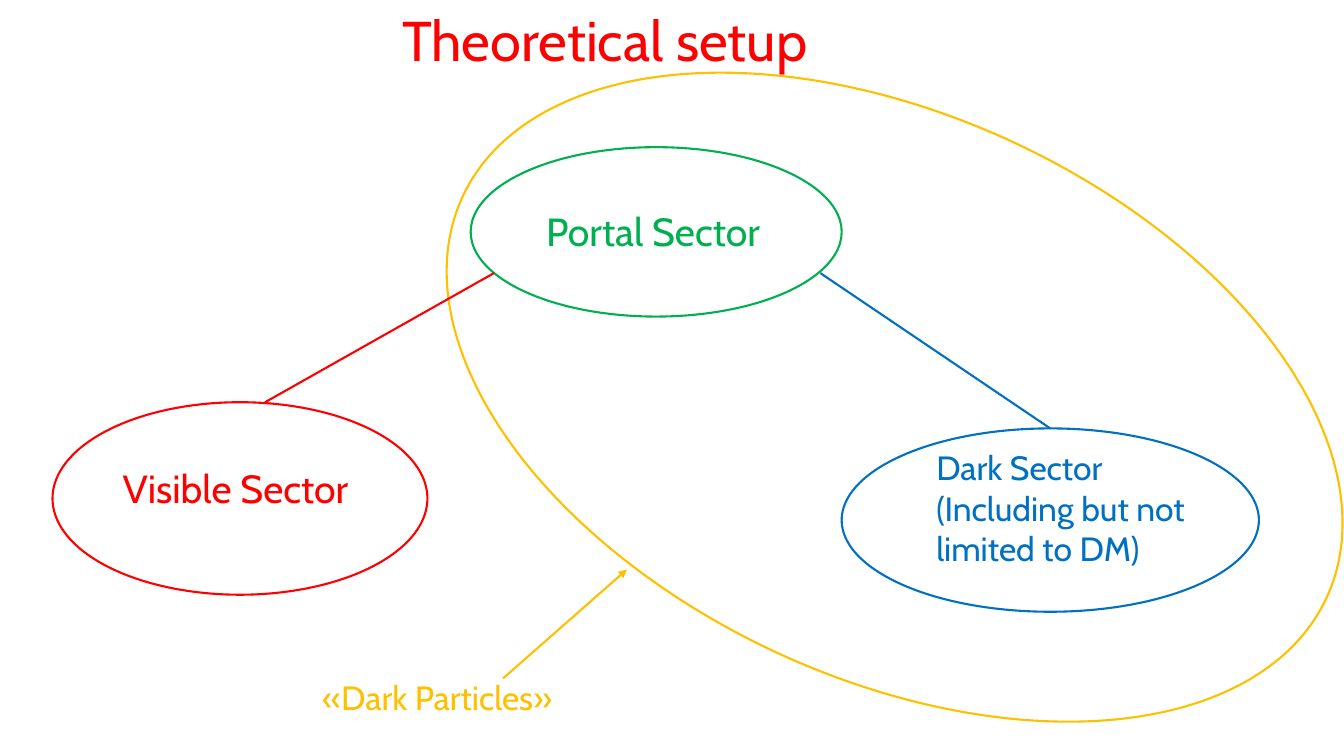
from lxml import etree
from pptx import Presentation
from pptx.dml.color import RGBColor
from pptx.enum import shapes, text
from pptx.oxml import ns
from pptx.util import Pt

RED = RGBColor(0xFF, 0x00, 0x00)
GREEN = RGBColor(0x00, 0xB0, 0x50)
BLUE = RGBColor(0x00, 0x70, 0xC0)
AMBER = RGBColor(0xFF, 0xC0, 0x00)


def write(holder, wording, size, color, wrap=False):
    frame = holder.text_frame
    frame.text = wording
    frame_format = {
        "word_wrap": wrap,
        "auto_size": text.MSO_AUTO_SIZE.SHAPE_TO_FIT_TEXT,
        "vertical_anchor": text.MSO_ANCHOR.TOP,
    }
    for name, value in frame_format.items():
        setattr(frame, name, value)
    paragraph = frame.paragraphs[0]
    paragraph.alignment = text.PP_ALIGN.LEFT
    for name, value in {"name": "Cabin", "size": Pt(size)}.items():
        setattr(paragraph.runs[0].font, name, value)
    paragraph.runs[0].font.color.rgb = color


def outline(item, color):
    item.line.color.rgb = color
    item.line.width = Pt(1.5)


deck = Presentation()
deck.slide_width, deck.slide_height = Pt(960), Pt(540)
slide = deck.slides.add_slide(deck.slide_layouts[5])

heading = slide.shapes.title
heading_box = {"left": 280, "top": 0, "width": 317, "height": 55.5}
for name, value in heading_box.items():
    setattr(heading, name, Pt(value))
write(heading, "Theoretical setup", 40, RED)

sectors = {}
for sector, box, color, turn in [
    ("visible", (37.5, 287.3, 267.8, 137.5), RED, 0),
    ("portal", (336.2, 105.1, 265, 121), GREEN, 0),
    ("dark", (601.2, 306, 298, 131), BLUE, 0),
    ("particles", (298.8, 82.8, 680.4, 401.8), AMBER, 24.9),
]:
    oval = slide.shapes.add_shape(shapes.MSO_SHAPE.OVAL, *map(Pt, box))
    oval.shadow.inherit = False
    oval.fill.background()
    oval.rotation = turn
    outline(oval, color)
    sectors[sector] = oval

links = {}
for link, ends, color in [
    ("visible", (189.4, 287.3, 352.8, 195.1), RED),
    ("dark", (586, 195.1, 750.2, 306), BLUE),
    ("particles", (359.3, 484.6, 447.8, 406.8), AMBER),
]:
    line = slide.shapes.add_connector(shapes.MSO_CONNECTOR.STRAIGHT, *map(Pt, ends))
    outline(line, color)
    etree.SubElement(line._element.spPr, ns.qn("a:effectLst"))
    links[link] = line

links["dark"].end_connect(sectors["dark"], 0)
pointer_line = links["particles"].line._get_or_add_ln()
etree.SubElement(pointer_line, ns.qn("a:tailEnd"), type="triangle")

for wording, box, size, color, wrap in [
    ("Visible Sector", (80.6, 328.3, 182.2, 41), 28, RED, False),
    ("Portal Sector", (383, 144.7, 172, 41), 28, GREEN, False),
    ("Dark Sector (Including but not limited to DM)",
     (661.7, 316, 221.8, 94.3), 24, BLUE, True),
    ("«Dark Particles»", (223.2, 480.2, 180, 36), 24, AMBER, False),
]:
    write(slide.shapes.add_textbox(*map(Pt, box)), wording, size, color, wrap)

deck.save("out.pptx")
